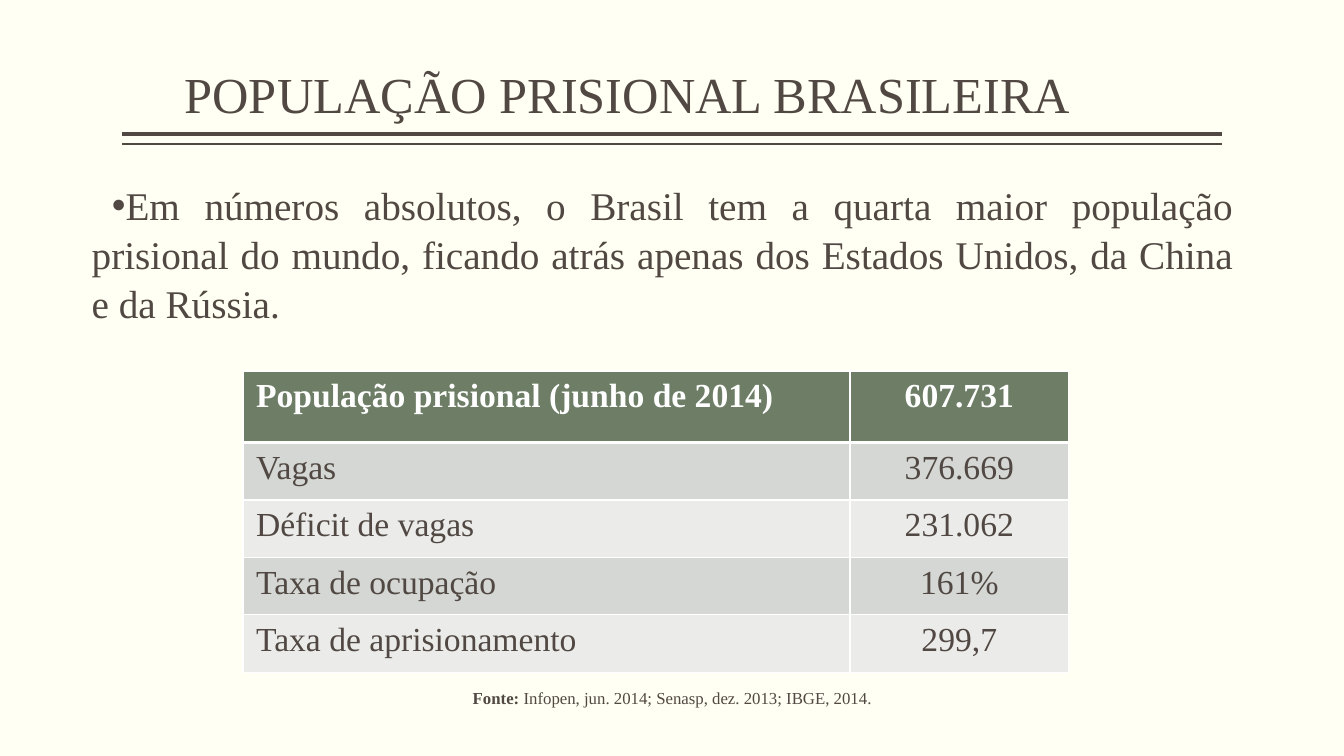
from dataclasses import dataclass

from lxml.etree import SubElement as Sub
from pptx import Presentation
from pptx.dml.color import RGBColor as Rgb
from pptx.enum.shapes import MSO_CONNECTOR as Conn
from pptx.enum.text import MSO_ANCHOR as Anchor, MSO_AUTO_SIZE as Auto, PP_ALIGN as Align
from pptx.oxml.ns import qn
from pptx.util import Inches, Pt

WIDE, HIGH = 13.33, 7.5


# Colours and type sizes
@dataclass(frozen=True)
class Theme:
    font: str = "Times New Roman"
    paper: str = "FFFFF3"
    ink: str = "514843"
    white: str = "FFFFFF"
    green: str = "6D7D66"
    bands: tuple = ("D4D7D3", "EBECEA")
    title: int = 36
    body: int = 28
    cell: int = 24
    note: int = 12


THEME = Theme()

TITLE = "POPULAÇÃO PRISIONAL BRASILEIRA"
POINT = ("Em números absolutos, o Brasil tem a quarta maior população prisional "
         "do mundo, ficando atrás apenas dos Estados Unidos, da China e da Rússia.")
SOURCE = ("Fonte: ", "Infopen, jun. 2014; Senasp, dez. 2013; IBGE, 2014.")
ROWS = [
    ("População prisional (junho de 2014)", "607.731"),
    ("Vagas", "376.669"),
    ("Déficit de vagas", "231.062"),
    ("Taxa de ocupação", "161%"),
    ("Taxa de aprisionamento", "299,7"),
]


def style(para, size, align, color=THEME.ink, bold=None):
    para.alignment = align
    para.space_before = para.space_after = Pt(0)
    font = para.font
    font.name, font.size, font.bold = THEME.font, Pt(size), bold
    font.color.rgb = Rgb.from_string(color)


def place(shape, left, top, wide, high, anchor):
    shape.left, shape.top = Inches(left), Inches(top)
    shape.width, shape.height = Inches(wide), Inches(high)
    frame = shape.text_frame
    frame.word_wrap, frame.auto_size = True, Auto.NONE
    frame.vertical_anchor = anchor
    frame.margin_left = frame.margin_right = 0
    frame.margin_top = frame.margin_bottom = Inches(0.05)
    return frame


def indent(para, first, bullet=None):
    props = para._p.get_or_add_pPr()
    props.set("marL", "0")
    props.set("indent", str(Inches(first)))
    if bullet:
        Sub(props, qn("a:buFont"), typeface="Arial")
        Sub(props, qn("a:buChar"), char=bullet)
    else:
        Sub(props, qn("a:buNone"))


def rule(slide, top, weight):
    edge = 1.21
    line = slide.shapes.add_connector(
        Conn.STRAIGHT, Inches(WIDE - edge), Inches(top), Inches(edge), Inches(top))
    line.line.color.rgb = Rgb.from_string(THEME.ink)
    line.line.width = Pt(weight)
    Sub(line._element.spPr, qn("a:effectLst"))


def head(slide):
    frame = place(slide.shapes.title, 0.67, 0.3, WIDE / 1.2, 0.98, Anchor.BOTTOM)
    para = frame.paragraphs[0]
    para.text = TITLE
    para.line_spacing = 0.9
    style(para, THEME.title, Align.CENTER)


def body(slide):
    top = 1.73
    frame = place(slide.placeholders[1], 0.91, top, 11.32, HIGH - top, Anchor.TOP)
    point = frame.paragraphs[0]
    point.text = POINT
    style(point, THEME.body, Align.JUSTIFY)
    point.line_spacing = 1.04
    indent(point, 0.2, "•")

    # The source line sits below the table
    note = frame.add_paragraph()
    for text in SOURCE:
        note.add_run().text = text
    note.runs[0].font.bold = True
    style(note, THEME.note, Align.CENTER)
    note.space_before = Pt(258)
    indent(note, 0.2)


def border(cell, side, weight):
    line = Sub(cell._tc.get_or_add_tcPr(), qn(f"a:ln{side}"), w=str(Pt(weight)))
    fill = Sub(line, qn("a:solidFill"))
    Sub(fill, qn("a:srgbClr"), val=THEME.white)


def fill_cell(cell, text, row, col):
    top = row == 0
    cell.margin_left = cell.margin_right = Inches(0.13)
    cell.margin_top = cell.margin_bottom = Inches(0.07)
    for side in "LRTB":
        thick = (top and side == "B") or (row == 1 and side == "T")
        border(cell, side, 3 if thick else 1)
    cell.fill.solid()
    shade = THEME.green if top else THEME.bands[(row - 1) % 2]
    cell.fill.fore_color.rgb = Rgb.from_string(shade)
    para = cell.text_frame.paragraphs[0]
    para.text = text
    style(para, THEME.cell, Align.CENTER if col else Align.LEFT,
          THEME.white if top else THEME.ink, top)


def grid(slide):
    cols, first, rest = (6.02, 2.17), 0.71, 0.57
    high = first + rest * (len(ROWS) - 1)
    table = slide.shapes.add_table(
        len(ROWS), len(cols), Inches(2.41), Inches(3.68),
        Inches(sum(cols)), Inches(high)).table
    for col, wide in enumerate(cols):
        table.columns[col].width = Inches(wide)
    for row, texts in enumerate(ROWS):
        table.rows[row].height = Inches(rest if row else first)
        for col, text in enumerate(texts):
            fill_cell(table.cell(row, col), text, row, col)


def main():
    deck = Presentation()
    deck.slide_width, deck.slide_height = Inches(WIDE), Inches(HIGH)
    slide = deck.slides.add_slide(deck.slide_layouts[1])
    slide.background.fill.solid()
    slide.background.fill.fore_color.rgb = Rgb.from_string(THEME.paper)

    # Double rule under the title
    rule(slide, 1.33, 3)
    rule(slide, 1.43, 1)

    head(slide)
    body(slide)
    grid(slide)
    deck.save("out.pptx")


if __name__ == "__main__":
    main()
